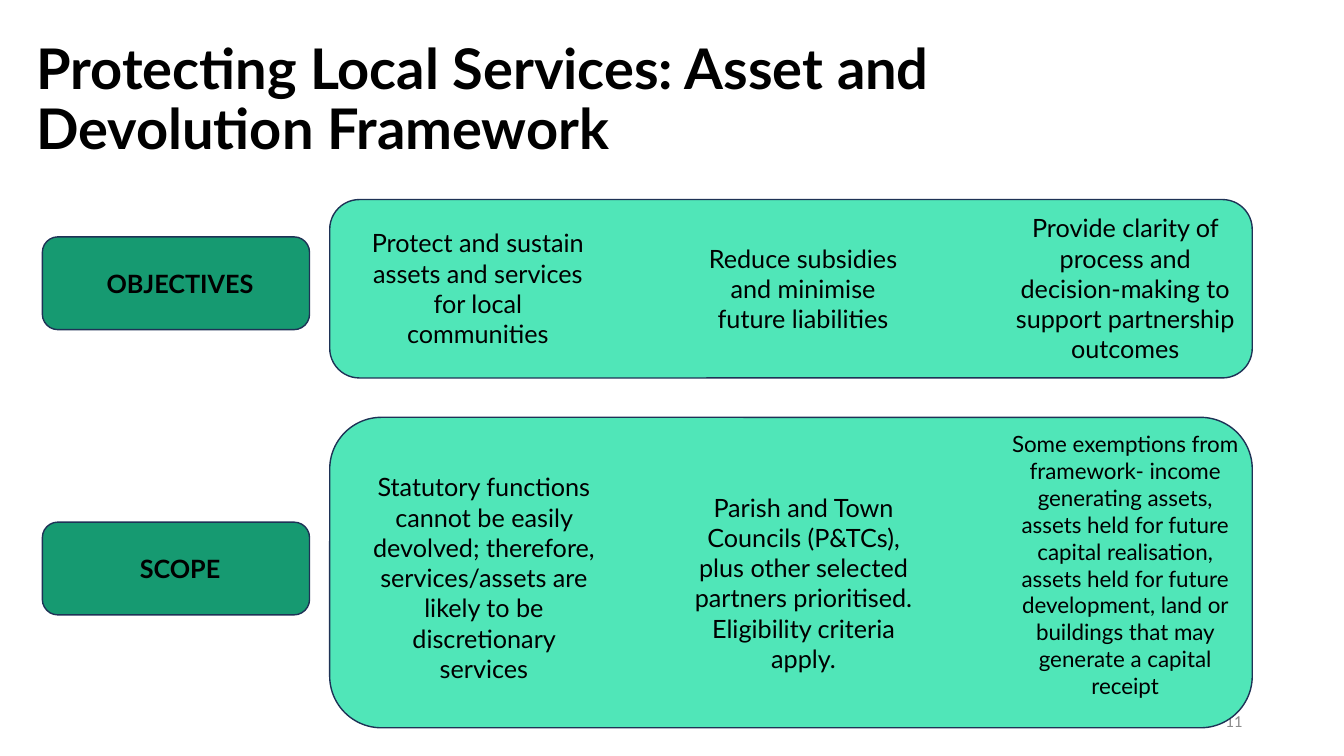
from pptx import Presentation
from pptx.dml.color import RGBColor
from pptx.enum.shapes import MSO_SHAPE
from pptx.enum.text import MSO_ANCHOR, PP_ALIGN
from pptx.util import Inches, Pt

ROUNDED = MSO_SHAPE.ROUNDED_RECTANGLE
TOP, MIDDLE = MSO_ANCHOR.TOP, MSO_ANCHOR.MIDDLE
LEFT, CENTER, RIGHT = PP_ALIGN.LEFT, PP_ALIGN.CENTER, PP_ALIGN.RIGHT

BLACK = RGBColor(0x00, 0x00, 0x00)
GREY = RGBColor(0x8C, 0x8C, 0x8C)
NAVY = RGBColor(0x1E, 0x32, 0x56)
MINT = RGBColor(0x50, 0xE6, 0xB8)
GREEN = RGBColor(0x16, 0x9A, 0x71)


def write_text(box, text, size=18, font="Lato", color=BLACK, bold=False,
               align=CENTER, anchor=TOP, margins=(0.1, 0.05, 0.1, 0.05)):
    frame = box.text_frame
    frame.word_wrap = True
    frame.vertical_anchor = anchor
    (frame.margin_left, frame.margin_top,
     frame.margin_right, frame.margin_bottom) = map(Inches, margins)
    para = frame.paragraphs[0]
    para.alignment = align
    span = para.add_run()
    span.text = text
    span.font.name = font
    span.font.size = Pt(size)
    span.font.bold = bold
    span.font.color.rgb = color
    return para


def add_panel(page, left, top, width, height, fill):
    panel = page.shapes.add_shape(ROUNDED, Inches(left), Inches(top),
                                  Inches(width), Inches(height))
    panel.shadow.inherit = False
    panel.fill.solid()
    panel.fill.fore_color.rgb = fill
    panel.line.color.rgb = NAVY
    panel.line.width = Pt(1)
    return panel


deck = Presentation()
deck.slide_width = Inches(13.33)
deck.slide_height = Inches(7.5)
page = deck.slides.add_slide(deck.slide_layouts[5])

# Title
title = page.shapes.title
title.left, title.top = Inches(0.26), Inches(0.28)
title.width, title.height = Inches(11.83), Inches(1.45)
title_para = write_text(
    title, "Protecting Local Services: Asset and Devolution Framework",
    size=40, bold=True, align=LEFT, anchor=MIDDLE)
title_para.line_spacing = 0.9

# Page number, partly behind the lower panel
number = page.shapes.add_textbox(Inches(9.42), Inches(6.95), Inches(3), Inches(0.4))
write_text(number, "11", size=12, font="Calibri", color=GREY, align=RIGHT, anchor=MIDDLE)

# Rows: label, label top, panel top, panel height,
# then statements as (left, top, width, height, size, text)
rows = [
    ("OBJECTIVES", 2.35, 1.98, 1.77, [
        (3.62, 2.25, 2.24, 1.23, 18,
         "Protect and sustain assets and services for local communities"),
        (6.96, 2.4, 2.01, 0.92, 18,
         "Reduce subsidies and minimise future liabilities"),
        (10.02, 2.1, 2.28, 1.53, 18,
         "Provide clarity of process and decision-making to support "
         "partnership outcomes"),
    ]),
    ("SCOPE", 5.18, 4.14, 3.08, [
        (3.68, 4.67, 2.24, 2.15, 18,
         "Statutory functions cannot be easily devolved; therefore, "
         "services/assets are likely to be discretionary services"),
        (6.85, 4.87, 2.24, 1.83, 18,
         "Parish and Town Councils (P&TCs), plus other selected partners "
         "prioritised. Eligibility criteria apply."),
        (10.02, 4.26, 2.28, 2.98, 16,
         "Some exemptions from framework- income generating assets, assets "
         "held for future capital realisation, assets held for future "
         "development, land or buildings that may generate a capital receipt"),
    ]),
]

for label, label_top, panel_top, panel_height, statements in rows:
    add_panel(page, 3.27, panel_top, 9.15, panel_height, MINT)
    tab = add_panel(page, 0.42, label_top, 2.65, 0.92, GREEN)
    write_text(tab, label, bold=True, anchor=MIDDLE, margins=(0.18, 0.05, 0.1, 0.05))
    for left, top, width, height, size, text in statements:
        box = page.shapes.add_textbox(Inches(left), Inches(top),
                                      Inches(width), Inches(height))
        write_text(box, text, size=size, margins=(0, 0.01, 0, 0))

deck.save("out.pptx")
